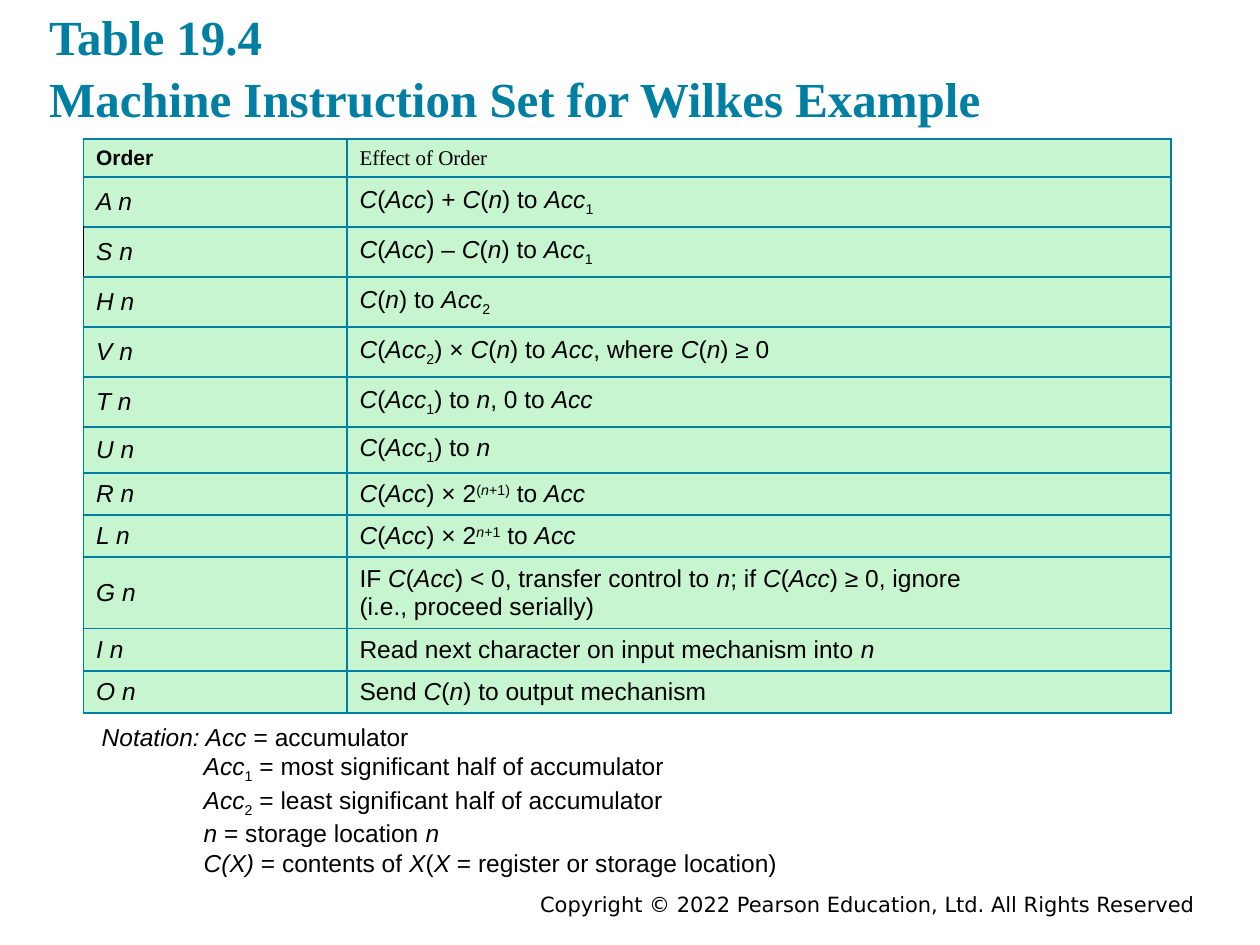
"""Build the slide listing the machine instruction set for the Wilkes example."""
import pptx
import pptx.dml.color
import pptx.enum.text
import pptx.oxml.ns
import pptx.util
from lxml import etree

Pt = pptx.util.Pt
COLORS = {"accent": "007FA3", "text": "000000", "cell": "C6F5CF", "page": "FFFFFF"}
BASELINES = {"_": "-25000", "^": "30000"}


def write(paragraph, marked, size=14, face="Arial", color="text", bold=False):
    """Add runs where *...* is italic, _..._ subscript and ^...^ superscript."""
    pieces = [["", False, None]]
    for char in marked:
        words, italic, shift = pieces[-1]
        if char == "*":
            pieces.append(["", not italic, shift])
        elif char in BASELINES:
            pieces.append(["", italic, None if shift else char])
        else:
            pieces[-1][0] += char
    for words, italic, shift in pieces:
        if not words:
            continue
        run = paragraph.add_run()
        run.text = words
        run.font.size = Pt(size)
        run.font.name = face
        run.font.bold = bold
        run.font.italic = italic
        run.font.color.rgb = pptx.dml.color.RGBColor.from_string(COLORS[color])
        if shift:
            run._r.get_or_add_rPr().set("baseline", BASELINES[shift])


def add_border(cell, side, color):
    """Draw a one-point solid border on one side of a cell."""
    line = etree.SubElement(cell._tc.get_or_add_tcPr(), pptx.oxml.ns.qn(f"a:{side}"), w=str(Pt(1)))
    fill = etree.SubElement(line, pptx.oxml.ns.qn("a:solidFill"))
    etree.SubElement(fill, pptx.oxml.ns.qn("a:srgbClr"), val=color)


presentation = pptx.Presentation()
presentation.slide_width = Pt(720)
presentation.slide_height = Pt(540)
slide = presentation.slides.add_slide(presentation.slide_layouts[6])
slide.background.fill.solid()
slide.background.fill.fore_color.rgb = pptx.dml.color.RGBColor.from_string(COLORS["page"])

copyright_line = slide.shapes.add_textbox(Pt(126), Pt(506), Pt(564), Pt(16)).text_frame
copyright_line.word_wrap = True
copyright_line.paragraphs[0].alignment = pptx.enum.text.PP_ALIGN.RIGHT
write(copyright_line.paragraphs[0], "Copyright © 2022 Pearson Education, Ltd. All Rights Reserved",
      12, "DejaVu Sans")

orders = [
    ("A", "*C*(*Acc*) + *C*(*n*) to *Acc*_1_", 28.6),
    ("S", "*C*(*Acc*) – *C*(*n*) to *Acc*_1_", 28.6),
    ("H", "*C*(*n*) to *Acc*_2_", 28.6),
    ("V", "*C*(*Acc*_2_) × *C*(*n*) to *Acc*, where *C*(*n*) ≥ 0", 28.6),
    ("T", "*C*(*Acc*_1_) to *n*, 0 to *Acc*", 28.6),
    ("U", "*C*(*Acc*_1_) to *n*", 21.6),
    ("R", "*C*(*Acc*) × 2^(*n*+1)^ to *Acc*", 21.6),
    ("L", "*C*(*Acc*) × 2^*n*+1^ to *Acc*", 21.6),
    ("G", "IF *C*(*Acc*) < 0, transfer control to *n*; if *C*(*Acc*) ≥ 0, ignore\n"
          "(i.e., proceed serially)", 37.5),
    ("I", "Read next character on input mechanism into *n*", 21.6),
    ("O", "Send *C*(*n*) to output mechanism", 21.6),
]
header_height = 19.5
table_height = header_height + sum(height for _, _, height in orders)
instructions = slide.shapes.add_table(
    len(orders) + 1, 2, Pt(47.75), Pt(79.5), Pt(621.5), Pt(table_height)).table
instructions.first_row = False
instructions.horz_banding = False
instructions.columns[0].width = Pt(150.5)
instructions.columns[1].width = Pt(471)

instructions.rows[0].height = Pt(header_height)
write(instructions.cell(0, 0).text_frame.paragraphs[0], "Order", 12, bold=True)
write(instructions.cell(0, 1).text_frame.paragraphs[0], "Effect of Order", 12, "Times New Roman")
for row, (letter, effect, height) in enumerate(orders, 1):
    instructions.rows[row].height = Pt(height)
    write(instructions.cell(row, 0).text_frame.paragraphs[0], f"*{letter} n*")
    effect_frame = instructions.cell(row, 1).text_frame
    for index, sentence in enumerate(effect.split("\n")):
        write(effect_frame.add_paragraph() if index else effect_frame.paragraphs[0], sentence)

subtraction_order = instructions.cell(2, 0)
for cell in instructions.iter_cells():
    cell.vertical_anchor = pptx.enum.text.MSO_ANCHOR.MIDDLE
    for side in ("lnL", "lnR", "lnT", "lnB"):
        dark = side == "lnL" and cell == subtraction_order
        add_border(cell, side, COLORS["text" if dark else "accent"])
    cell.fill.solid()
    cell.fill.fore_color.rgb = pptx.dml.color.RGBColor.from_string(COLORS["cell"])

notation = slide.shapes.add_textbox(Pt(51), Pt(409), Pt(502), Pt(92)).text_frame
notation.word_wrap = True
write(notation.paragraphs[0], "*Notation: Acc* = accumulator")
for definition in (
    "*Acc*_1_ = most significant half of accumulator",
    "*Acc*_2_ = least significant half of accumulator",
    "*n* = storage location *n*",
    "*C(X)* = contents of *X*(*X* = register or storage location)",
):
    meaning = notation.add_paragraph()
    indent = meaning._p.get_or_add_pPr()
    indent.set("marL", str(Pt(58.3)))
    indent.set("indent", str(Pt(-58.3)))
    write(meaning, "\t" + definition)

title = slide.shapes.add_textbox(Pt(21), Pt(10), Pt(648), Pt(70)).text_frame
title.word_wrap = True
title.vertical_anchor = pptx.enum.text.MSO_ANCHOR.BOTTOM
title.margin_top = title.margin_bottom = Pt(7.2)
heading = title.paragraphs[0]
heading.line_spacing = 1.05
write(heading, "Table 19.4", 28, "Times New Roman", "accent", True)
heading.add_line_break()
write(heading, "Machine Instruction Set for Wilkes Example", 28, "Times New Roman", "accent", True)

presentation.save("out.pptx")
